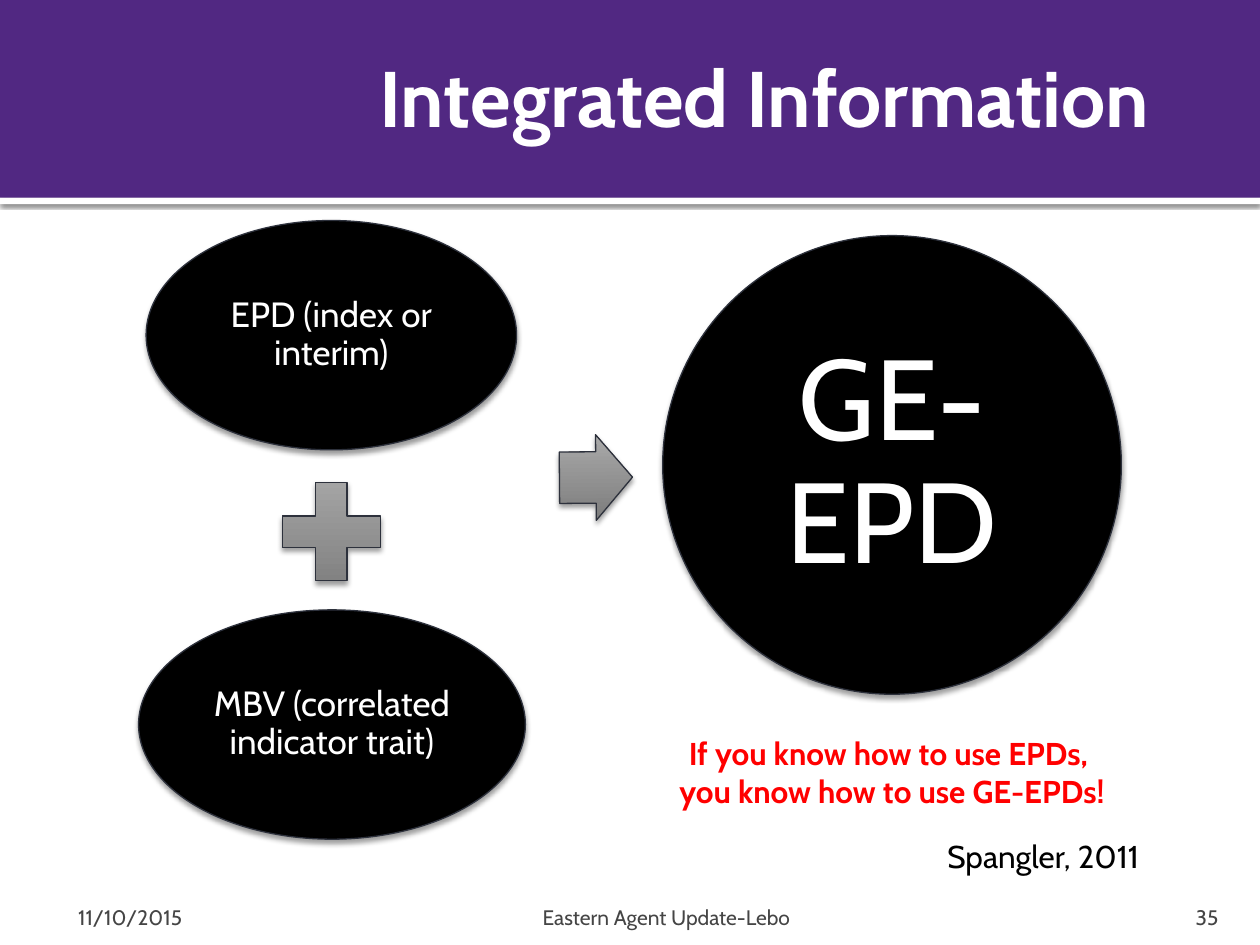
from lxml import etree
from pptx import Presentation
from pptx.dml.color import RGBColor
from pptx.enum.shapes import MSO_SHAPE
from pptx.enum.text import MSO_ANCHOR, MSO_AUTO_SIZE, PP_ALIGN
from pptx.oxml.ns import qn
from pptx.util import Inches, Pt

LEFT, CENTER, RIGHT = PP_ALIGN.LEFT, PP_ALIGN.CENTER, PP_ALIGN.RIGHT
TOP, MIDDLE, BOTTOM = MSO_ANCHOR.TOP, MSO_ANCHOR.MIDDLE, MSO_ANCHOR.BOTTOM
RECTANGLE, OVAL = MSO_SHAPE.RECTANGLE, MSO_SHAPE.OVAL
PLUS, ARROW = MSO_SHAPE.MATH_PLUS, MSO_SHAPE.RIGHT_ARROW

FONT = "Cabin"
WHITE, BLACK, RED, GRAY = "FFFFFF", "000000", "FF0000", "454545"
PURPLE, OUTLINE = "512882", "2D313C"
SIGN_GRADIENT = ("7C7C7C", "AAAAAA")
DIAGRAM_SHADOW = dict(opacity=38, blur=3.1, distance=2)
RULE_SHADOW = dict(opacity=60, blur=2.5, distance=0.8)

BANDS = [
    ((0, 1.57, 10, 0.05), WHITE, RULE_SHADOW),
    ((0, 0, 10, 1.57), PURPLE, None),
]
TITLE = ("Integrated Information", (2.25, 0.08, 7.58, 1.37))
TERMS = [
    ("EPD (index or interim)", (1.16, 1.75, 2.94, 1.82), 20, 0.03),
    ("MBV (correlated indicator trait)", (1.1, 4.84, 3.07, 1.82), 20, 0.03),
    ("GE-EPD", (5.26, 1.87, 3.64, 3.64), 65, 0.09),
]
SIGNS = [
    (PLUS, (2.1, 3.69, 1.06, 1.06), (), 0),
    (ARROW, (4.44, 3.45, 0.58, 0.68), (0.6, 0.5), 359.5),
]
FOOTER_MARGINS = (0.05, 0.05, 0.05, 0)
NOTE_MARGINS = (0.1, 0.05, 0.1, 0.05)
NOTES = [
    ("Eastern Agent Update-Lebo", (1.67, 7.08, 7.24, 0.3), CENTER, BOTTOM,
     FOOTER_MARGINS, dict(size=12, color=GRAY)),
    ("35", (8.97, 7.08, 0.8, 0.3), RIGHT, BOTTOM,
     (0.1, 0.05, 0.1, 0), dict(size=12, color=GRAY)),
    ("Spangler, 2011", (7.42, 6.59, 2.17, 0.4), LEFT, TOP,
     NOTE_MARGINS, dict(size=18, color=BLACK)),
    ("11/10/2015", (0.5, 7.08, 1.17, 0.3), LEFT, BOTTOM,
     (0.12, 0.05, 0.05, 0), dict(size=12, color=GRAY)),
    ("If you know how to use EPDs, \nyou know how to use GE-EPDs!",
     (5.08, 5.78, 4, 0.71), CENTER, TOP,
     NOTE_MARGINS, dict(size=18, color=RED, bold=True)),
]


def rgb(value):
    """Turn a hex string into a colour."""
    return RGBColor.from_string(value)


def inches(values):
    """Turn a sequence of numbers into lengths."""
    return [Inches(value) for value in values]


def write(holder, text, align, anchor, margins, size, color, bold=False, spacing=1):
    """Write one formatted paragraph into a shape."""
    frame = holder.text_frame
    left, top, right, bottom = inches(margins)
    frame_format = dict(word_wrap=True, auto_size=MSO_AUTO_SIZE.NONE,
                        vertical_anchor=anchor, margin_left=left, margin_top=top,
                        margin_right=right, margin_bottom=bottom)
    for name, value in frame_format.items():
        setattr(frame, name, value)
    paragraph = frame.paragraphs[0]
    paragraph.text = text
    paragraph.alignment = align
    paragraph.line_spacing = spacing
    for name, value in dict(name=FONT, size=Pt(size), bold=bold).items():
        setattr(paragraph.font, name, value)
    paragraph.font.color.rgb = rgb(color)


def add_shadow(shape, opacity, blur, distance):
    """Give a shape a black shadow that falls straight down."""
    shape.shadow.inherit = False
    effects = shape._element.spPr.find(qn("a:effectLst"))
    outer = etree.SubElement(effects, qn("a:outerShdw"), blurRad=str(Pt(blur)),
                             dist=str(Pt(distance)), dir="5400000", rotWithShape="0")
    black = etree.SubElement(outer, qn("a:srgbClr"), val=BLACK)
    etree.SubElement(black, qn("a:alpha"), val=str(opacity * 1000))


def add_filled(slide, kind, box, fill, outline=None, shadow=None):
    """Add a preset shape with a solid or two-colour vertical fill."""
    shape = slide.shapes.add_shape(kind, *inches(box))
    if isinstance(fill, str):
        shape.fill.solid()
        shape.fill.fore_color.rgb = rgb(fill)
    else:
        shape.fill.gradient()
        shape.fill.gradient_angle = 90
        for stop, color in zip(shape.fill.gradient_stops, fill):
            stop.color.rgb = rgb(color)
    if outline:
        shape.line.color.rgb = rgb(outline)
        shape.line.width = Pt(0.75)
    else:
        shape.line.fill.background()
    if shadow:
        add_shadow(shape, **shadow)
    else:
        shape.shadow.inherit = False
    return shape


def main():
    """Build the slide and save it."""
    deck = Presentation()
    deck.slide_width, deck.slide_height = inches((10, 7.5))
    slide = deck.slides.add_slide(deck.slide_layouts[5])

    for box, fill, shadow in BANDS:
        add_filled(slide, RECTANGLE, box, fill, shadow=shadow)

    heading, heading_box = TITLE
    title = slide.shapes.title
    title.left, title.top, title.width, title.height = inches(heading_box)
    write(title, heading, CENTER, MIDDLE, (0.1, 0.05, 0.05, 0.05), 45, WHITE, bold=True)
    slide.shapes._spTree.append(title._element)

    for term, box, size, margin in TERMS:
        oval = add_filled(slide, OVAL, box, BLACK, OUTLINE, DIAGRAM_SHADOW)
        write(oval, term, CENTER, MIDDLE, [margin] * 4, size, WHITE, spacing=0.9)

    for kind, box, adjustments, rotation in SIGNS:
        sign = add_filled(slide, kind, box, SIGN_GRADIENT, OUTLINE, DIAGRAM_SHADOW)
        sign.rotation = rotation
        for index, value in enumerate(adjustments):
            sign.adjustments[index] = value

    for text, box, align, anchor, margins, style in NOTES:
        note = slide.shapes.add_textbox(*inches(box))
        write(note, text, align, anchor, margins, **style)

    deck.save("out.pptx")


if __name__ == "__main__":
    main()
